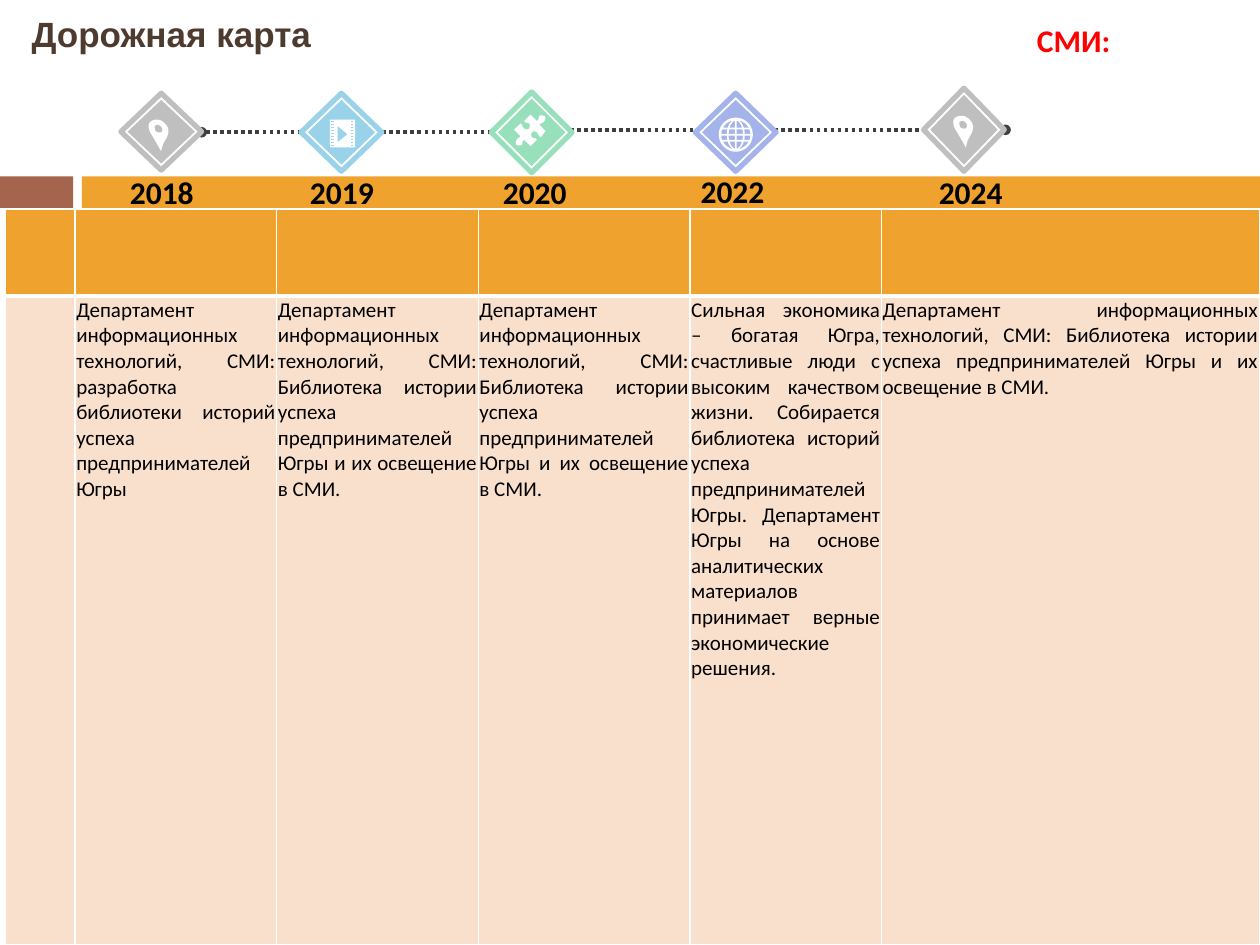
"""Build the roadmap slide with a timeline of milestones and a table of actions."""
from dataclasses import dataclass
from math import cos, pi, sin, sqrt
from typing import Any

from lxml import etree
from pptx import Presentation
from pptx.dml.color import RGBColor
from pptx.enum.dml import MSO_LINE
from pptx.enum.shapes import MSO_CONNECTOR, MSO_SHAPE
from pptx.enum.text import MSO_ANCHOR, PP_ALIGN
from pptx.oxml.ns import qn
from pptx.util import Pt

RECTANGLE, DIAMOND = MSO_SHAPE.RECTANGLE, MSO_SHAPE.DIAMOND
ELBOW, DOTTED = MSO_CONNECTOR.ELBOW, MSO_LINE.ROUND_DOT
TOP, MIDDLE = MSO_ANCHOR.TOP, MSO_ANCHOR.MIDDLE
LEFT, CENTER, JUSTIFY = PP_ALIGN.LEFT, PP_ALIGN.CENTER, PP_ALIGN.JUSTIFY

COLORS = {
    "white": "FFFFFF", "black": "000000", "red": "FF0000", "title": "4E3B30",
    "brown": "A5644E", "orange": "F0A22E", "peach": "F9E0CD", "dots": "3F3F3F",
    "gray": "BFBFBF", "blue": "9AD3E9", "green": "98DFBB", "violet": "A4B4EA",
}
BOX_INSETS = (7.2, 3.6, 7.2, 3.6)
CELL_INSETS = (0.72, 0.72, 0.72, 0)
ICON_UNIT = 0.72

Point = tuple[float, float]
Contour = list[Point]
Box = tuple[float, float, float, float]


@dataclass(frozen=True)
class Milestone:
    """A year on the timeline with its diamond and icon."""
    year: str
    color: str
    diamond: Box
    year_box: Box
    icon: list[Contour]
    icon_origin: Point


def trace(start: Point, *segments: tuple[float, ...]) -> Contour:
    """Return points along lines (2 numbers) and cubic curves (6 numbers)."""
    points = [start]
    for segment in segments:
        if len(segment) == 2:
            points.append((segment[0], segment[1]))
            continue
        x0, y0 = points[-1]
        x1, y1, x2, y2, x3, y3 = segment
        for step in range(1, 7):
            t = step / 6
            a, b, c, d = (1 - t) ** 3, 3 * t * (1 - t) ** 2, 3 * t * t * (1 - t), t ** 3
            points.append((a * x0 + b * x1 + c * x2 + d * x3,
                           a * y0 + b * y1 + c * y2 + d * y3))
    return points


def rectangle(x: float, y: float, width: float, height: float) -> Contour:
    """Return the corners of a rectangle."""
    return [(x, y), (x + width, y), (x + width, y + height), (x, y + height)]


def film_icon() -> list[Contour]:
    """Return a film strip with perforations and a play mark."""
    holes = [rectangle(x, 1 + 2.37 * row, 2, 1)[::-1] for x in (1, 16.5) for row in range(9)]
    return [rectangle(0, 0, 20, 22), [(6, 5), (6, 18), (14, 11.5)], *holes]


def globe_icon() -> list[Contour]:
    """Return a disc cut into cells by meridians and parallels."""
    radius, gap = 11.6, 0.7
    disc = [(13.5 * cos(i * pi / 24), 13.5 * sin(i * pi / 24)) for i in range(48)]
    cells = []
    for top, bottom in ((-11, -5.6), (-4.2, -gap), (gap, 4.2), (5.6, 11)):
        heights = [top + (bottom - top) * i / 6 for i in range(7)]
        for west, east in ((-1, -0.55), (-0.55, 0), (0, 0.55), (0.55, 1)):
            def edge(share: float, side: float) -> Contour:
                shift = 0 if abs(share) == 1 else side * gap
                return [(share * sqrt(radius ** 2 - y * y) + shift, y) for y in heights]
            cells.append(edge(west, 1) + edge(east, -1)[::-1])
    return [disc, *cells]


PIN = [
    trace((8, 0), (10, 0, 12, 1, 14, 3), (18, 7, 17, 11, 15, 15), (13, 18, 12, 20, 11, 25),
          (8, 20, 7, 18, 4, 13), (1, 9, 0, 4, 2, 2), (4, 0, 6, 0, 8, 0)),
    trace((8, 4), (7, 4, 5, 5, 6, 7), (6, 9, 7, 10, 9, 10), (11, 11, 12, 9, 12, 8),
          (12, 6, 10, 4, 8, 4)),
]
PUZZLE = [trace(
    (24, 1), (25, 2, 25, 4, 24, 5), (23, 7, 22, 6, 20, 8), (25, 13), (21, 18),
    (19, 16, 19, 15, 18, 14), (17, 13, 15, 13, 14, 14), (14, 15, 13, 16, 14, 18),
    (16, 19, 17, 18, 18, 20), (13, 25), (8, 20), (6, 21, 7, 22, 6, 24),
    (4, 25, 3, 24, 2, 24), (1, 23, 1, 21, 2, 20), (3, 18, 4, 19, 5, 17), (0, 12), (5, 7),
    (7, 8, 6, 10, 8, 11), (9, 12, 11, 12, 12, 11), (12, 10, 13, 8, 12, 7),
    (10, 6, 9, 7, 8, 5), (13, 0), (18, 5), (20, 4, 19, 3, 20, 1), (21, 0, 23, 1, 24, 1))]

MILESTONES = [
    Milestone("2018", "gray", (69.1, 53.3, 46.1, 43.9), (60.5, 96.5, 64, 26.6), PIN, (84.2, 68.4)),
    Milestone("2019", "blue", (172.1, 53.3, 46.1, 44.6), (163.4, 96.5, 64, 26.6),
              film_icon(), (188.6, 68.4)),
    Milestone("2020", "green", (280.8, 52.6, 46.1, 46.1), (267.8, 96.5, 75.6, 26.6),
              PUZZLE, (293.8, 65.5)),
    Milestone("2022", "violet", (397.4, 53.3, 46.1, 44.6), (386.6, 95.8, 64, 26.6),
              globe_icon(), (420.5, 77)),
    Milestone("2024", "gray", (527.8, 50.4, 46.1, 47.5), (522.7, 96.5, 64, 26.6),
              PIN, (544, 66.2)),
]
LIBRARY = ("Департамент информационных технологий, СМИ: Библиотека истории успеха "
           "предпринимателей Югры и их освещение в СМИ.")
ACTIONS = [
    "",
    "Департамент информационных технологий, СМИ: разработка библиотеки историй успеха "
    "предпринимателей Югры",
    LIBRARY,
    LIBRARY,
    "Сильная экономика – богатая Югра, счастливые люди с высоким качеством жизни. "
    "Собирается библиотека историй успеха предпринимателей Югры. Департамент Югры на основе "
    "аналитических материалов принимает верные экономические решения.",
    LIBRARY,
]
COLUMN_WIDTHS = (40, 115.2, 115.2, 121, 109.4, 216)
ROW_HEIGHTS = (49.7, 370.8)


def rgb(name: str) -> RGBColor:
    """Return the named colour."""
    return RGBColor.from_string(COLORS[name])


def points(*lengths: float) -> list[int]:
    """Convert point lengths to slide units."""
    return [Pt(length) for length in lengths]


def write_text(holder: Any, text: str, *, size: float, color: str = "black",
               font: str = "Calibri", bold: bool = True, align: PP_ALIGN = LEFT,
               anchor: MSO_ANCHOR = MIDDLE, insets: Box = BOX_INSETS) -> None:
    """Write formatted text into a shape or a table cell."""
    frame = holder.text_frame
    frame.word_wrap = True
    target = frame if hasattr(holder, "shape_id") else holder
    target.vertical_anchor = anchor
    (target.margin_left, target.margin_top,
     target.margin_right, target.margin_bottom) = points(*insets)
    paragraph = frame.paragraphs[0]
    paragraph.alignment = align
    run = paragraph.add_run()
    run.text = text
    run.font.size, run.font.name, run.font.bold = Pt(size), font, bold
    run.font.color.rgb = rgb(color)


def add_filled(shapes: Any, kind: MSO_SHAPE, box: Box, fill: str, line: str = "") -> None:
    """Add a preset shape with an optional 3 pt outline."""
    shape = shapes.add_shape(kind, *points(*box))
    shape.shadow.inherit = False
    shape.fill.solid()
    shape.fill.fore_color.rgb = rgb(fill)
    if line:
        shape.line.color.rgb = rgb(line)
        shape.line.width = Pt(3)
        etree.SubElement(shape.element.spPr.find(qn("a:ln")), qn("a:round"))
    else:
        shape.line.fill.background()


def add_icon(shapes: Any, contours: list[Contour], origin: Point) -> None:
    """Add a white icon made of closed contours."""
    placed = [[(Pt(origin[0] + x * ICON_UNIT), Pt(origin[1] + y * ICON_UNIT)) for x, y in contour]
              for contour in contours]
    builder = shapes.build_freeform(*placed[0][0])
    builder.add_line_segments(placed[0][1:], close=True)
    for contour in placed[1:]:
        builder.move_to(*contour[0])
        builder.add_line_segments(contour[1:], close=True)
    icon = builder.convert_to_shape()
    icon.shadow.inherit = False
    icon.fill.solid()
    icon.fill.fore_color.rgb = rgb("white")
    icon.line.fill.background()


def add_timeline(shapes: Any) -> None:
    """Add the dotted line that runs behind the diamonds."""
    timeline = shapes.add_connector(ELBOW, *points(115.2, 75.6, 574.6, 74.2))
    timeline.line.color.rgb = rgb("dots")
    timeline.line.width = Pt(2)
    timeline.line.dash_style = DOTTED
    properties = timeline.element.spPr
    guides = properties.find(qn("a:prstGeom")).find(qn("a:avLst"))
    etree.SubElement(guides, qn("a:gd"), name="adj1", fmla="val 44900")
    for end in ("a:headEnd", "a:tailEnd"):
        etree.SubElement(properties.find(qn("a:ln")), qn(end), type="oval")
    etree.SubElement(properties, qn("a:effectLst"))


def add_milestone(shapes: Any, milestone: Milestone) -> None:
    """Add a milestone's double diamond, icon and year."""
    left, top, width, height = milestone.diamond
    diamonds = shapes.add_group_shape().shapes
    add_filled(diamonds, DIAMOND, milestone.diamond, "white", milestone.color)
    add_filled(diamonds, DIAMOND, (left + 3.8, top + 3.8, width - 7.6, height - 7.6),
               milestone.color)
    add_icon(shapes, milestone.icon, milestone.icon_origin)
    year = shapes.add_textbox(*points(*milestone.year_box))
    write_text(year, milestone.year, size=18, align=CENTER)


def format_cell(cell: Any, fill: str, bottom: float) -> None:
    """Give a cell white borders and a solid fill."""
    properties = cell._tc.get_or_add_tcPr()
    for side, width in (("L", 1), ("R", 1), ("T", 1), ("B", bottom)):
        border = etree.SubElement(properties, qn(f"a:ln{side}"), w=str(Pt(width)))
        color = etree.SubElement(border, qn("a:solidFill"))
        etree.SubElement(color, qn("a:srgbClr"), val=COLORS["white"])
    cell.fill.solid()
    cell.fill.fore_color.rgb = rgb(fill)


def add_actions(shapes: Any) -> None:
    """Add the table with the actions of each year."""
    table = shapes.add_table(2, len(ACTIONS), *points(
        2.9, 119.5, sum(COLUMN_WIDTHS), sum(ROW_HEIGHTS))).table
    table.horz_banding = False
    for row, height in zip(table.rows, ROW_HEIGHTS):
        row.height = Pt(height)
    for index, (width, action) in enumerate(zip(COLUMN_WIDTHS, ACTIONS)):
        table.columns[index].width = Pt(width)
        format_cell(table.cell(0, index), "orange", 3)
        format_cell(table.cell(1, index), "peach", 1)
        if action:
            write_text(table.cell(1, index), action, size=12, bold=False, align=JUSTIFY,
                       anchor=TOP, insets=CELL_INSETS)


def main() -> None:
    """Build and save the slide."""
    presentation = Presentation()
    presentation.slide_width, presentation.slide_height = points(720, 540)
    slide = presentation.slides.add_slide(presentation.slide_layouts[5])
    shapes = slide.shapes
    add_filled(shapes, RECTANGLE, (0, 100.8, 41.8, 18), "brown")
    add_filled(shapes, RECTANGLE, (46.8, 100.8, 673.2, 18), "orange")
    title = shapes.title
    title.left, title.top, title.width, title.height = points(10.8, -11.5, 193, 61.2)
    write_text(title, "Дорожная карта", size=20, color="title", font="Arial")
    add_timeline(shapes)
    for milestone in MILESTONES:
        add_milestone(shapes, milestone)
    media = shapes.add_textbox(*points(403.9, 11.5, 316.1, 22.3))
    write_text(media, "СМИ:", size=18, color="red", insets=(188.6, 6.5, 6.5, 6.5))
    add_actions(shapes)
    presentation.save("out.pptx")


if __name__ == "__main__":
    main()
